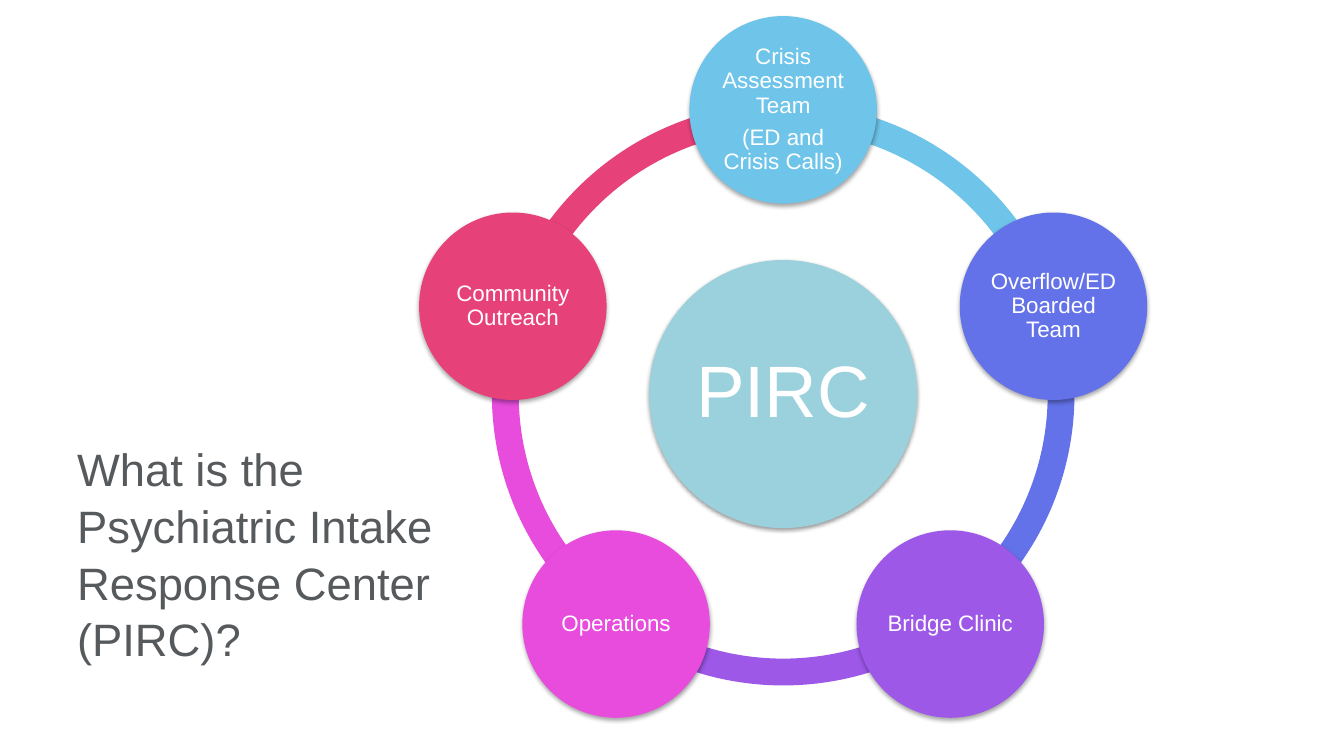
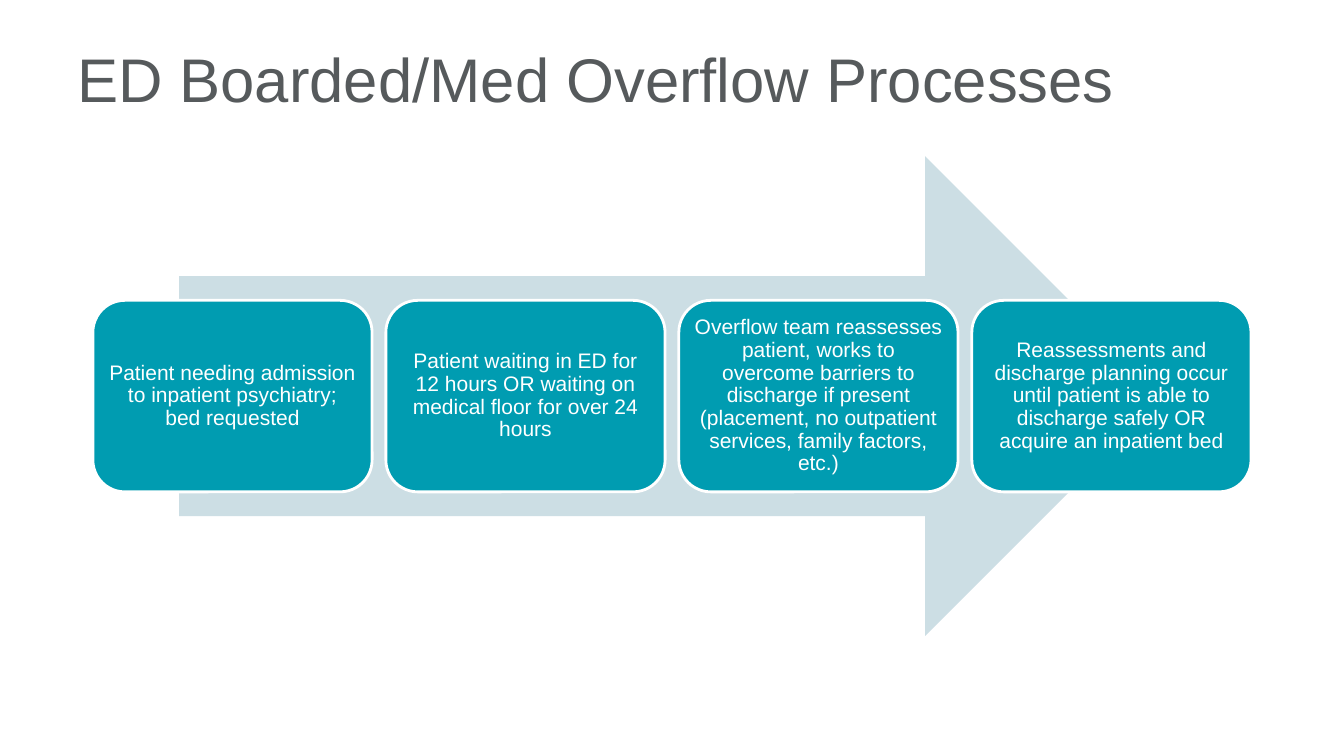
from math import cos, radians, sin

from lxml.etree import SubElement
from pptx import Presentation
from pptx.dml.color import RGBColor
from pptx.enum.shapes import MSO_SHAPE
from pptx.enum.text import MSO_ANCHOR, PP_ALIGN
from pptx.oxml.ns import qn
from pptx.util import Inches, Pt

WHITE = RGBColor(0xFF, 0xFF, 0xFF)
BLACK = RGBColor(0x00, 0x00, 0x00)
GREY = RGBColor(0x56, 0x5A, 0x5C)
AQUA = RGBColor(0x9A, 0xD1, 0xDC)
SKY = RGBColor(0x6E, 0xC4, 0xE9)
BLUE = RGBColor(0x63, 0x72, 0xE8)
PURPLE = RGBColor(0x9D, 0x58, 0xE8)
MAGENTA = RGBColor(0xE7, 0x4C, 0xDD)
PINK = RGBColor(0xE7, 0x41, 0x7A)
TEAL = RGBColor(0x00, 0x9C, 0xB1)
PALE = RGBColor(0xCC, 0xDE, 0xE4)

COLS, ROWS = 80, 45


class Deck:
    font = "Arial"

    def __init__(self):
        self.prs = Presentation()
        self.prs.slide_width = Inches(13.333)
        self.prs.slide_height = Inches(7.5)
        self.s = None

    def x(self, cols):
        return round(self.prs.slide_width * cols / COLS)

    def y(self, rows):
        return round(self.prs.slide_height * rows / ROWS)

    def slide(self):
        self.s = self.prs.slides.add_slide(self.prs.slide_layouts[6])

    def run(self, p, text, size, color):
        r = p.add_run()
        r.text = text
        r.font.name = self.font
        r.font.size = Pt(size)
        r.font.color.rgb = color

    def title(self, text, top, width, height, size, spacing=1.0):
        sp = self.s.shapes.add_textbox(
            self.x(4), self.y(top), self.x(width), self.y(height))
        tf = sp.text_frame
        tf.word_wrap = True
        tf.margin_top = Inches(0.11)
        p = tf.paragraphs[0]
        p.line_spacing = spacing
        self.run(p, text, size, GREY)

    def shape(self, kind, mid_col, mid_row, width, height, fill, outline=None):
        sp = self.s.shapes.add_shape(
            kind, self.x(mid_col - width / 2), self.y(mid_row - height / 2),
            self.x(width), self.y(height))
        sp.shadow.inherit = False
        sp.fill.solid()
        sp.fill.fore_color.rgb = fill
        if outline is None:
            sp.line.fill.background()
        else:
            sp.line.color.rgb = outline
            sp.line.width = Pt(2)
        return sp

    def label(self, sp, lines, size, inset):
        tf = sp.text_frame
        tf.word_wrap = True
        tf.vertical_anchor = MSO_ANCHOR.MIDDLE
        tf.margin_left = tf.margin_right = Inches(inset)
        tf.margin_top = tf.margin_bottom = Inches(inset)
        for i, line in enumerate(lines):
            p = tf.add_paragraph() if i else tf.paragraphs[0]
            p.alignment = PP_ALIGN.CENTER
            p.line_spacing = 0.9
            if i:
                p.space_before = Pt(size * 0.35)
            self.run(p, line, size, WHITE)

    def shadow(self, sp, distance, opacity):
        effects = sp._element.spPr.find(qn("a:effectLst"))
        outer = SubElement(
            effects, qn("a:outerShdw"), blurRad=str(Pt(3.1)),
            dist=str(Pt(distance)), dir="5400000", rotWithShape="0")
        color = SubElement(outer, qn("a:srgbClr"), val=str(BLACK))
        SubElement(color, qn("a:alpha"), val=str(opacity * 1000))

    def disc(self, col, row, size, fill, lines, text_size, inset, distance, opacity):
        sp = self.shape(MSO_SHAPE.OVAL, col, row, size, size, fill)
        self.shadow(sp, distance, opacity)
        self.label(sp, lines, text_size, inset)

    def arc(self, col, row, size, start, end, fill):
        sp = self.shape(MSO_SHAPE.BLOCK_ARC, col, row, size, size, fill)
        for i, value in enumerate((start * 0.6, end * 0.6, 0.046)):
            sp.adjustments[i] = value

    def cycle(self, col, row, hub, nodes):
        step = 360 / len(nodes)
        angles = [(270 + step * i) % 360 for i in range(len(nodes))]
        for angle, (fill, _) in reversed(list(zip(angles, nodes))):
            self.arc(col, row, 34.68, angle, (angle + step) % 360, fill)
        self.disc(col, row, 15.96, AQUA, [hub], 52, 0.07, 1.6, 38)
        orbit = 16.92
        for angle, (fill, lines) in zip(angles, nodes):
            self.disc(col + orbit * cos(radians(angle)),
                      row + orbit * sin(radians(angle)),
                      11.16, fill, lines, 16, 0.02, 1.8, 35)

    def process(self, row, steps):
        middle = COLS / 2
        self.shape(MSO_SHAPE.RIGHT_ARROW, middle, row, 58.68, 28.56, PALE)
        width, gap = 16.62, 0.82
        for i, text in enumerate(steps):
            col = middle + (i - (len(steps) - 1) / 2) * (width + gap)
            sp = self.shape(MSO_SHAPE.ROUNDED_RECTANGLE, col, row,
                            width, 11.4, TEAL, WHITE)
            self.label(sp, [text], 15, 0.06)


def main():
    deck = Deck()

    deck.slide()
    deck.title("What is the Psychiatric Intake Response Center (PIRC)?",
               25.5, 25, 14.46, 32.4, 1.04)
    deck.cycle(46.62, 23.46, "PIRC", [
        (SKY, ["Crisis Assessment Team", "(ED and Crisis Calls)"]),
        (BLUE, ["Overflow/ED Boarded Team"]),
        (PURPLE, ["Bridge Clinic"]),
        (MAGENTA, ["Operations"]),
        (PINK, ["Community Outreach"]),
    ])

    deck.slide()
    deck.title("ED Boarded/Med Overflow Processes", 1.8, 72, 7.5, 44)
    deck.process(23.58, [
        "Patient needing admission to inpatient psychiatry; bed requested",
        "Patient waiting in ED for 12 hours OR waiting on medical floor "
        "for over 24 hours",
        "Overflow team reassesses patient, works to overcome barriers to "
        "discharge if present (placement, no outpatient services, "
        "family factors, etc.)",
        "Reassessments and discharge planning occur until patient is able "
        "to discharge safely OR acquire an inpatient bed",
    ])

    deck.prs.save("out.pptx")


if __name__ == "__main__":
    main()
